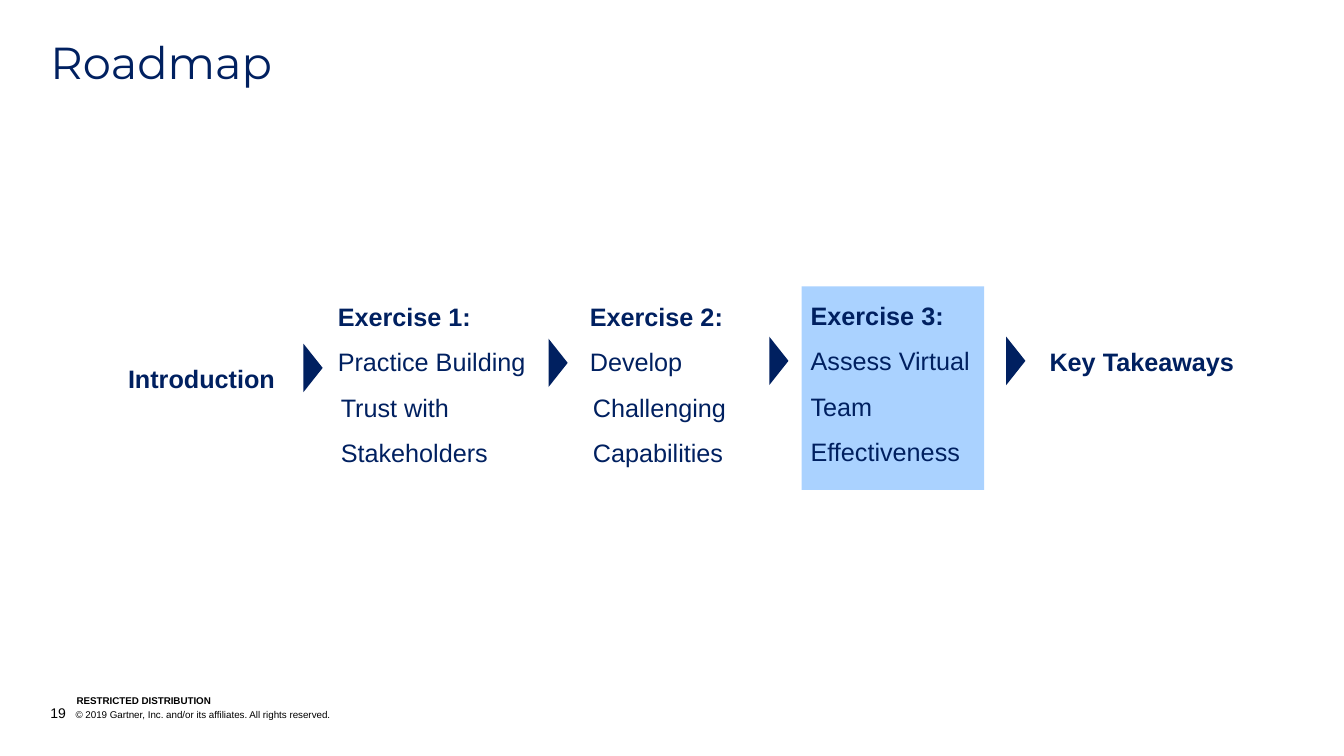
from pptx import Presentation
from pptx.dml.color import RGBColor
from pptx.enum.shapes import MSO_SHAPE as Shape
from pptx.enum.text import MSO_ANCHOR as Anchor
from pptx.oxml.ns import qn
from pptx.util import Inches, Pt
from lxml import etree

NAVY = RGBColor(0x00, 0x20, 0x60)
SKY = RGBColor(0xAA, 0xD2, 0xFF)
BLACK = RGBColor(0x00, 0x00, 0x00)
WHITE = RGBColor(0xFF, 0xFF, 0xFF)

deck = Presentation()
deck.slide_width, deck.slide_height = Inches(13.33), Inches(7.5)
page = deck.slides.add_slide(deck.slide_layouts[5])
page.background.fill.solid()
page.background.fill.fore_color.rgb = WHITE


def write(para, text, size=18, bold=False, color=NAVY, font="Arial", spacing=None, hang=0):
    if spacing:
        para.line_spacing = spacing
    if hang:
        properties = para._p.get_or_add_pPr()
        properties.set("marL", str(Inches(hang)))
        properties.set("indent", str(-Inches(hang)))
    span = para.add_run()
    span.text = text
    span.font.size, span.font.bold = Pt(size), bold
    span.font.name, span.font.color.rgb = font, color


def frame_in(box, left, top, width, height, anchor=Anchor.TOP, wrap=True):
    box.left, box.top = Inches(left), Inches(top)
    box.width, box.height = Inches(width), Inches(height)
    frame = box.text_frame
    frame.margin_left = frame.margin_top = frame.margin_right = frame.margin_bottom = 0
    frame.vertical_anchor, frame.word_wrap = anchor, wrap
    return frame


title = frame_in(page.shapes.title, 0.5, 0.4, 12.33, 0.48)
title.paragraphs[0].alignment = 1
write(title.paragraphs[0], "Roadmap", size=32, font="Montserrat", spacing=0.9)

highlight = page.shapes.add_shape(
    Shape.RECTANGLE, Inches(7.95), Inches(2.84), Inches(1.81), Inches(2.02))
highlight.shadow.inherit = False
highlight.fill.solid()
highlight.fill.fore_color.rgb = SKY
highlight.line.fill.background()

for text, left, top, width in [("Introduction", 1.27, 3.6, 1.47),
                               ("Key Takeaways", 10.41, 3.44, 1.84)]:
    frame = frame_in(page.shapes.add_textbox(0, 0, 0, 0), left, top, width, 0.29, wrap=False)
    write(frame.paragraphs[0], text, bold=True)

exercises = [
    ("Exercise 1:", "Practice Building Trust with Stakeholders", 3.35, 2.84, 1.95, 0.03),
    ("Exercise 2:", "Develop Challenging Capabilities", 5.85, 2.84, 1.72, 0.03),
    ("Exercise 3:", "Assess Virtual Team Effectiveness", 8.04, 2.83, 1.84, 0),
]
for heading, task, left, top, width, hang in exercises:
    frame = frame_in(page.shapes.add_textbox(0, 0, 0, 0), left, top, width, 1.85)
    write(frame.paragraphs[0], heading, bold=True, spacing=1.5, hang=hang)
    write(frame.add_paragraph(), task, spacing=1.5, hang=hang)

for left, top in [(3.01, 3.41), (5.44, 3.36), (7.63, 3.34), (9.98, 3.34)]:
    builder = page.shapes.build_freeform(Inches(left), Inches(top))
    builder.add_line_segments([(Inches(left + 0.19), Inches(top + 0.24)),
                               (Inches(left), Inches(top + 0.48))])
    arrow = builder.convert_to_shape()
    arrow.shadow.inherit = False
    arrow.fill.solid()
    arrow.fill.fore_color.rgb = NAVY
    arrow.line.fill.background()

restricted = frame_in(page.shapes.add_textbox(0, 0, 0, 0), 0.76, 6.89, 2.53, 0.12, Anchor.BOTTOM)
write(restricted.paragraphs[0], "RESTRICTED DISTRIBUTION", size=7, bold=True, color=BLACK)

footer = frame_in(page.shapes.add_textbox(0, 0, 0, 0), 0.5, 6.99, 7.99, 0.17, Anchor.BOTTOM)
para = footer.paragraphs[0]
tabs = etree.SubElement(para._p.get_or_add_pPr(), qn("a:tabLst"))
etree.SubElement(tabs, qn("a:tab"), pos=str(Inches(0.25)), algn="l")
write(para, "19", size=10, color=BLACK, hang=0.25)
write(para, "\t© 2019 Gartner, Inc. and/or its affiliates. All rights reserved.", size=7, color=BLACK)

deck.save("out.pptx")
